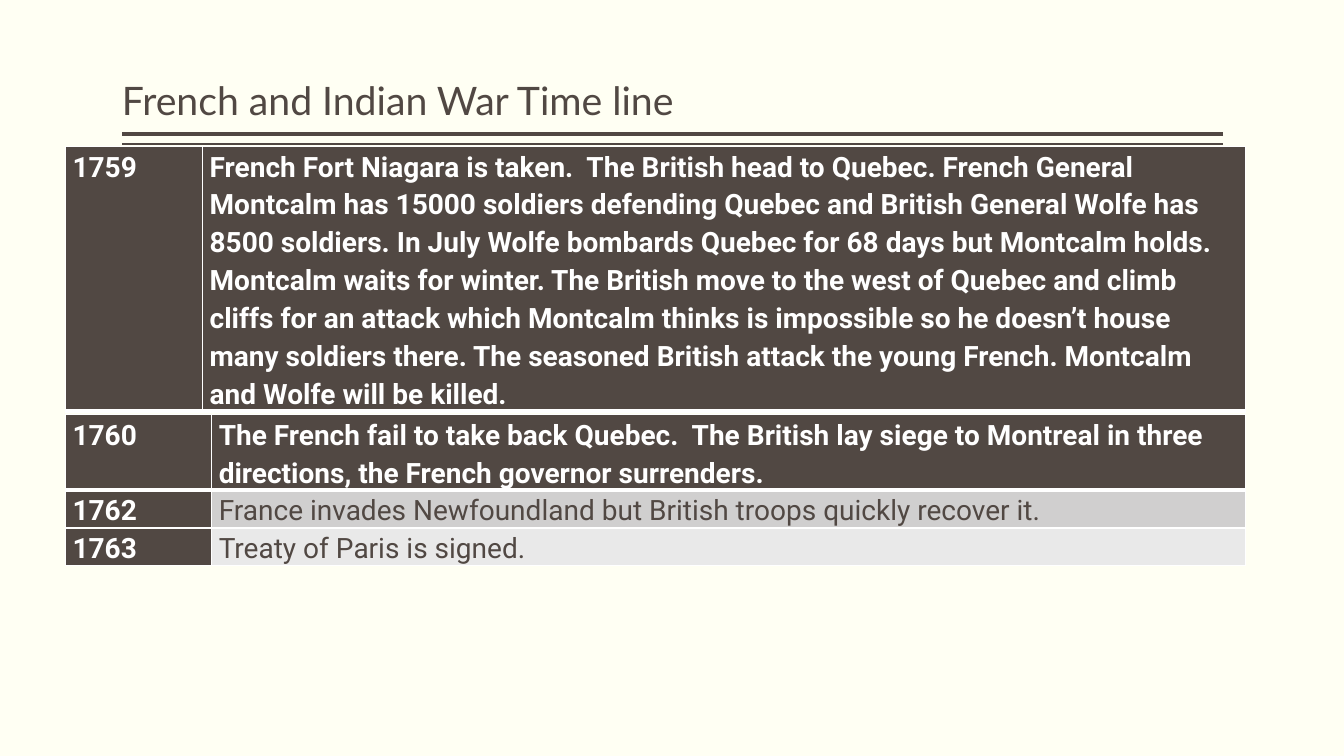
from lxml import etree
from pptx import Presentation
from pptx import util as u
from pptx.dml.color import RGBColor
from pptx.enum import shapes, text
from pptx.oxml import ns

BROWN, WHITE, CREAM = "514843", "FFFFFF", "FFFFF3"
BANDS = ("D0CFCF", "E9E9E9")
LINE_HEIGHT = 0.37

QUEBEC = [
    ("1759", "French Fort Niagara is taken.  The British head to Quebec. French General "
             "Montcalm has 15000 soldiers defending Quebec and British General Wolfe has "
             "8500 soldiers. In July Wolfe bombards Quebec for 68 days but Montcalm holds. "
             "Montcalm waits for winter. The British move to the west of Quebec and climb "
             "cliffs for an attack which Montcalm thinks is impossible so he doesn’t house "
             "many soldiers there. The seasoned British attack the young French. Montcalm "
             "and Wolfe will be killed.", 7),
]
WAR_END = [
    ("1760", "The French fail to take back Quebec.  The British lay siege to Montreal in three "
             "directions, the French governor surrenders.", 2),
    ("1762", "France invades Newfoundland but British troops quickly recover it.", 1),
    ("1763", "Treaty of Paris is signed.", 1),
]


def color(hex_string):
    return RGBColor.from_string(hex_string)


def set_font(paragraph, name, size, hex_string, bold=False):
    font = paragraph.font
    font.name, font.size, font.bold = name, u.Pt(size), bold
    font.color.rgb = color(hex_string)


def set_borders(cell, top, bottom):
    """Draw white cell borders; widths are in points."""
    properties = cell._tc.get_or_add_tcPr()
    sides = (("lnL", 1), ("lnR", 1), ("lnT", top), ("lnB", bottom))
    for index, (side, width) in enumerate(sides):
        border = etree.Element(ns.qn("a:" + side), w=str(u.Pt(width)))
        fill = etree.SubElement(border, ns.qn("a:solidFill"))
        etree.SubElement(fill, ns.qn("a:srgbClr"), val=WHITE)
        properties.insert(index, border)


def add_heading(slide, left, top, width, height):
    # Title
    title = slide.shapes.title
    title.left, title.top = u.Inches(left), u.Inches(top)
    title.width, title.height = u.Inches(width), u.Inches(height)
    frame = title.text_frame
    frame.text = "French and Indian War Time line"
    frame.word_wrap = True
    frame.auto_size = text.MSO_AUTO_SIZE.NONE
    frame.vertical_anchor = text.MSO_ANCHOR.BOTTOM
    frame.margin_left = frame.margin_right = 0
    frame.margin_top = frame.margin_bottom = u.Inches(0.05)
    paragraph = frame.paragraphs[0]
    paragraph.alignment = text.PP_ALIGN.LEFT
    paragraph.line_spacing = 0.9
    set_font(paragraph, "Lato", 28, BROWN)

    # Double rule under the title
    for gap, weight in ((0.05, 3), (0.15, 1)):
        y = u.Inches(top + height + gap)
        rule = slide.shapes.add_connector(
            shapes.MSO_CONNECTOR.STRAIGHT, u.Inches(left + width), y, u.Inches(left), y)
        rule.line.color.rgb = color(BROWN)
        rule.line.width = u.Pt(weight)
        etree.SubElement(rule._element.spPr, ns.qn("a:effectLst"))


def fill_cell(cell, words, fill, ink, bold):
    cell.fill.solid()
    cell.fill.fore_color.rgb = color(fill)
    cell.margin_left = cell.margin_right = u.Inches(0.07)
    cell.margin_top = cell.margin_bottom = 0
    cell.text = words
    paragraph = cell.text_frame.paragraphs[0]
    paragraph.line_spacing = 1.15
    set_font(paragraph, "Roboto", 20, ink, bold)


def add_timeline(slide, left, top, width, year_width, events):
    """Place a table whose first event is the dark header row."""
    height = u.Inches(LINE_HEIGHT * sum(lines for _, _, lines in events))
    table = slide.shapes.add_table(
        len(events), 2, u.Inches(left), u.Inches(top), u.Inches(width), height).table
    table.first_row = table.horz_banding = False
    table.columns[0].width = u.Inches(year_width)
    table.columns[1].width = u.Inches(width - year_width)
    for index, (year, event, lines) in enumerate(events):
        table.rows[index].height = u.Inches(LINE_HEIGHT * lines)
        year_cell, event_cell = table.rows[index].cells
        header = index == 0
        fill_cell(year_cell, year, BROWN, WHITE, True)
        fill_cell(event_cell, event, BROWN if header else BANDS[(index - 1) % 2],
                  WHITE if header else BROWN, header)
        for cell in (year_cell, event_cell):
            set_borders(cell, top=3 if index == 1 else 1, bottom=3 if header else 1)


def main():
    deck = Presentation()
    deck.slide_width, deck.slide_height = u.Inches(13.33), u.Inches(7.5)
    slide = deck.slides.add_slide(deck.slide_layouts[5])
    slide.background.fill.solid()
    slide.background.fill.fore_color.rgb = color(CREAM)

    add_heading(slide, 1.21, 0.08, 10.92, 1.2)
    add_timeline(slide, 0.65, 4.11, 11.7, 1.45, WAR_END)
    add_timeline(slide, 0.65, 1.45, 11.7, 1.36, QUEBEC)
    deck.save("out.pptx")


if __name__ == "__main__":
    main()
